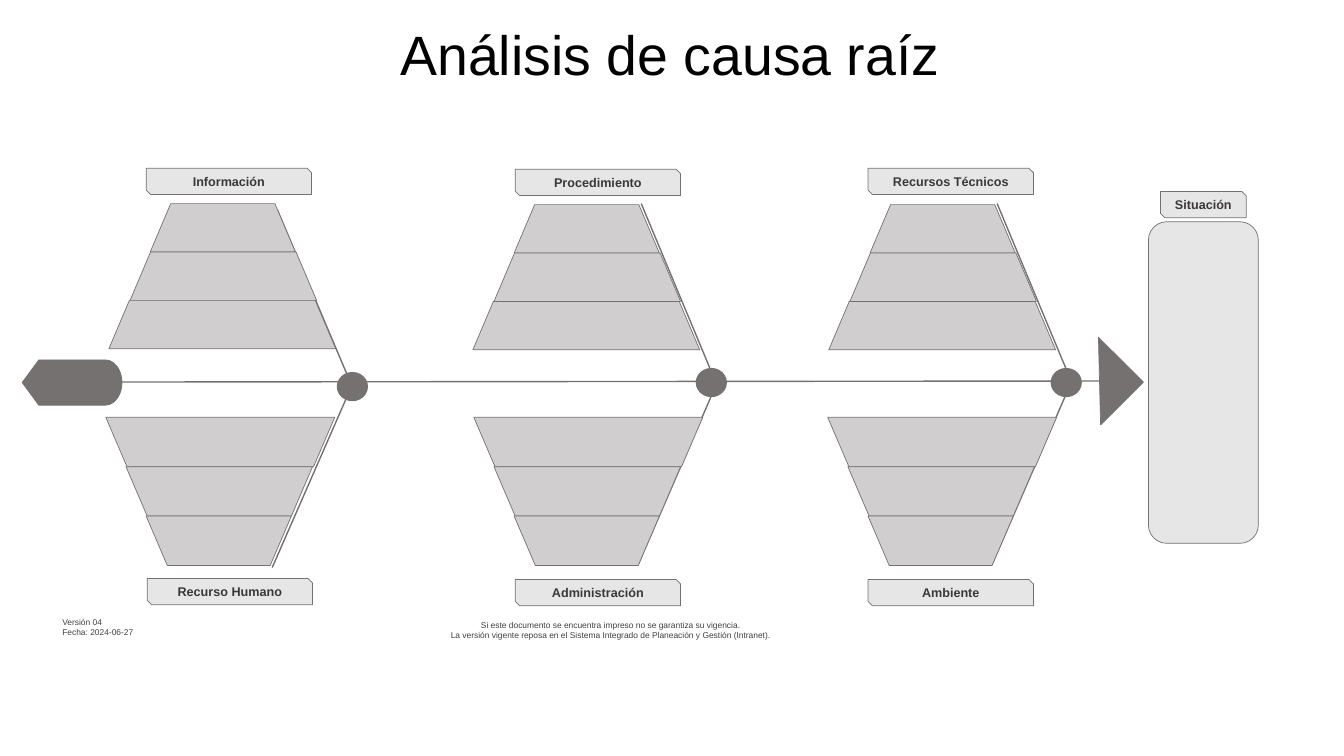
from lxml.etree import SubElement
from pptx import Presentation
from pptx.dml.color import RGBColor
from pptx.enum.shapes import MSO_CONNECTOR, MSO_SHAPE
from pptx.enum.text import MSO_ANCHOR, PP_ALIGN
from pptx.oxml.ns import qn
from pptx.util import Inches, Pt

DARK, MID, PALE = "767171", "D0CECE", "E7E6E6"
INK, NOTE = "3B3838", "404040"

TITLE = "Análisis de causa raíz"
VERSION = ["Versión 04", "Fecha: 2024-06-27"]
NOTICE = ["Si este documento se encuentra impreso no se garantiza su vigencia.",
          "La versión vigente reposa en el Sistema Integrado de Planeación y Gestión (Intranet)."]

# Label, left, top, width
LABELS = [
    ("Información", 1.45, 1.67, 1.64),
    ("Procedimiento", 5.11, 1.68, 1.64),
    ("Recursos Técnicos", 8.61, 1.67, 1.64),
    ("Recurso Humano", 1.46, 5.74, 1.64),
    ("Administración", 5.11, 5.75, 1.64),
    ("Ambiente", 8.61, 5.75, 1.64),
    ("Situación", 11.51, 1.9, 0.85),
]
SPINE = (1.21, 3.79, 10.91, 3.78)
JOINTS = [(3.34, 3.69), (6.9, 3.65), (10.42, 3.65)]
RIBS = [
    (2.75, 2.08, 3.44, 3.71), (6.36, 2.02, 7.04, 3.65), (9.89, 2.02, 10.57, 3.65),
    (10.57, 3.92, 9.84, 5.6), (7.05, 3.94, 6.33, 5.6), (3.44, 3.94, 2.7, 5.63),
]
UPPER = [(1.08, 2.02), (4.69, 2.03), (8.22, 2.03)]
LOWER = [(1.05, 4.14), (4.7, 4.14), (8.21, 4.14)]
# Inset from the column's left edge, width
UP_ROWS = [(0.41, 1.44), (0.21, 1.85), (0, 2.25)]
LOW_ROWS = [(0, 2.27), (0.2, 1.85), (0.4, 1.44)]
UP_STEP, LOW_STEP, SLANT = 0.48, 0.49, 0.21

deck = Presentation()
deck.slide_width, deck.slide_height = Inches(13.33), Inches(7.5)
shapes = deck.slides.add_slide(deck.slide_layouts[6]).shapes


def color(code):
    return RGBColor.from_string(code)


def paint(shape, fill, edge=True):
    shape.shadow.inherit = False
    shape.fill.solid()
    shape.fill.fore_color.rgb = color(fill)
    if edge:
        shape.line.color.rgb = color(DARK)
        shape.line.width = Pt(0.5)
    else:
        shape.line.fill.background()
    return shape


def block(kind, box, fill, edge=True):
    return paint(shapes.add_shape(kind, *map(Inches, box)), fill, edge)


def line(ends):
    link = shapes.add_connector(MSO_CONNECTOR.STRAIGHT, *map(Inches, ends))
    link.line.color.rgb = color(DARK)
    link.line.width = Pt(1)
    SubElement(link._element.spPr, qn("a:effectLst"))


def write(shape, lines, size, ink, align=PP_ALIGN.CENTER, anchor=MSO_ANCHOR.MIDDLE, bold=False):
    frame = shape.text_frame
    frame.text = "\n".join(lines)
    frame.word_wrap = True
    frame.vertical_anchor = anchor
    for para in frame.paragraphs:
        para.alignment = align
        for run in para.runs:
            font = run.font
            font.name, font.size, font.bold = "Arial", Pt(size), bold
            font.color.rgb = color(ink)
    return frame


def textbox(box):
    return shapes.add_textbox(*map(Inches, box))


heading = write(textbox((3.71, 0.27, 5.87, 0.61)), [TITLE], 39.6, "000000")
heading.paragraphs[0].line_spacing = 0.9

# Spine with tail, joints and head
block(MSO_SHAPE.FLOWCHART_DISPLAY, (0.22, 3.57, 0.99, 0.45), DARK)
line(SPINE)
for x, y in JOINTS:
    block(MSO_SHAPE.OVAL, (x, y, 0.31, 0.29), DARK, edge=False)
head = block(MSO_SHAPE.RIGHT_TRIANGLE, (10.59, 3.48, 0.63, 0.6), DARK)
head.rotation = 225
for rib in RIBS:
    line(rib)

# Cause bands above and below the spine
for x, y in UPPER:
    for i, (inset, width) in enumerate(UP_ROWS):
        band = block(MSO_SHAPE.TRAPEZOID, (x + inset, y + i * UP_STEP, width, UP_STEP), MID)
        band.adjustments[0] = 0.424
for x, y in LOWER:
    for i, (inset, width) in enumerate(LOW_ROWS):
        left, top = x + inset, y + i * LOW_STEP
        right, base = left + width, top + LOW_STEP
        path = shapes.build_freeform(Inches(left), Inches(top))
        path.add_line_segments([(Inches(a), Inches(b)) for a, b in (
            (right, top), (right - SLANT, base), (left + SLANT, base))])
        paint(path.convert_to_shape(), MID)

for name, x, y, width in LABELS:
    tag = block(MSO_SHAPE.SNIP_2_DIAG_RECTANGLE, (x, y, width, 0.26), PALE)
    frame = write(tag, [name], 9, INK, bold=True)
    frame.margin_top = frame.margin_bottom = 0
block(MSO_SHAPE.FLOWCHART_ALTERNATE_PROCESS, (11.39, 2.2, 1.09, 3.19), PALE)

write(textbox((0.52, 6.07, 1.07, 0.3)), VERSION, 6, NOTE, PP_ALIGN.LEFT, MSO_ANCHOR.TOP)
write(textbox((4.1, 6.1, 3.91, 0.3)), NOTICE, 6, NOTE, anchor=MSO_ANCHOR.TOP)

deck.save("out.pptx")
